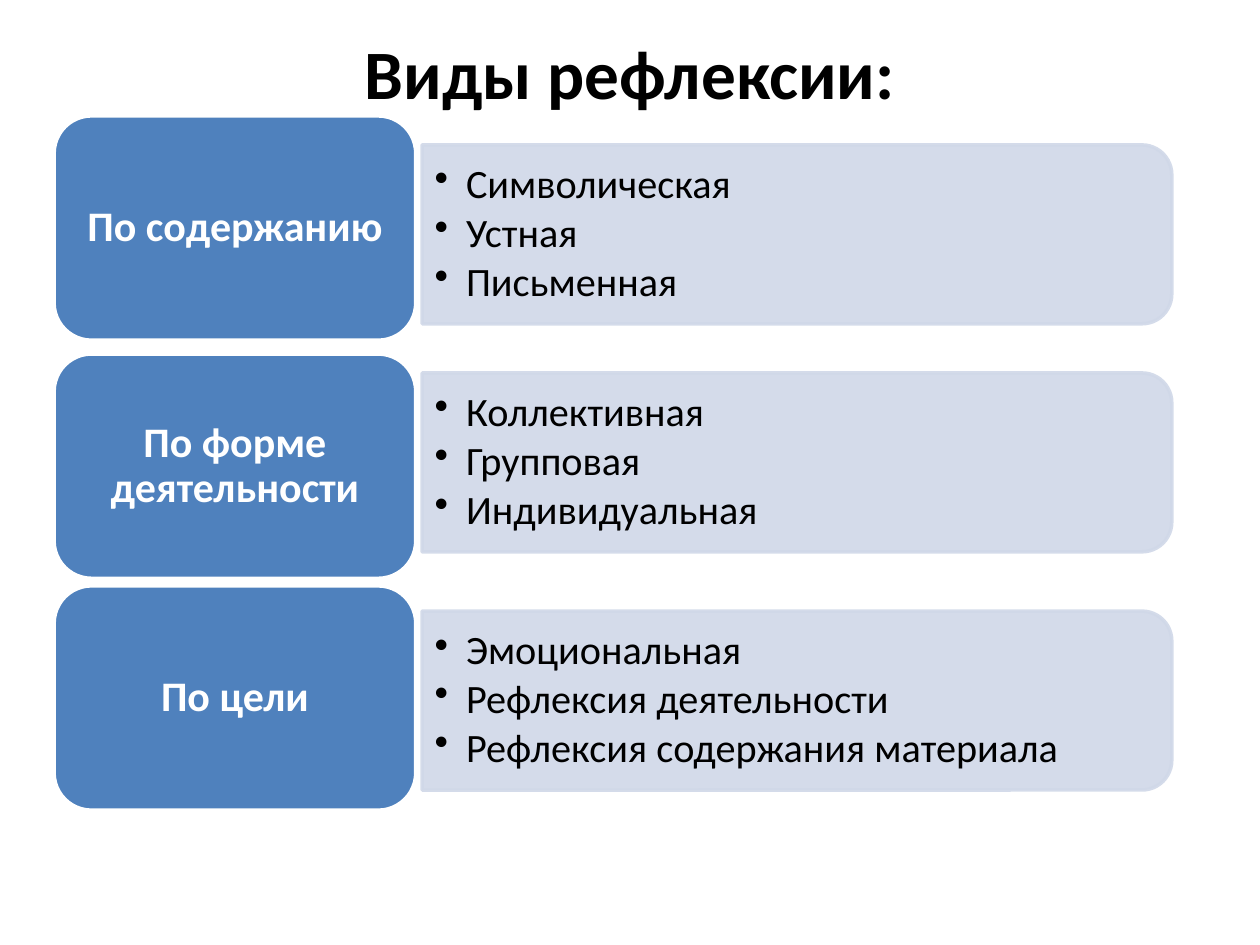
from dataclasses import dataclass

from lxml.etree import SubElement
from pptx import Presentation
from pptx.dml.color import RGBColor
from pptx.enum.shapes import MSO_SHAPE as Preset
from pptx.enum.text import MSO_ANCHOR as Anchor, PP_ALIGN as Align
from pptx.oxml.ns import qn
from pptx.util import Inches, Pt


@dataclass(frozen=True)
class Theme:
    font: str = "Calibri"
    ink: RGBColor = RGBColor(0x00, 0x00, 0x00)
    white: RGBColor = RGBColor(0xFF, 0xFF, 0xFF)
    label_fill: RGBColor = RGBColor(0x4F, 0x81, 0xBD)
    panel_fill: RGBColor = RGBColor(0xD0, 0xD8, 0xE8)
    panel_opacity: int = 90
    outline: float = 2
    title_size: float = 39.6
    label_size: float = 24
    item_size: float = 23


THEME = Theme()

# Columns and heights, in inches
LABEL_LEFT, LABEL_WIDTH, LABEL_HEIGHT = 0.43, 2.87, 1.78
PANEL_LEFT, PANEL_WIDTH, PANEL_HEIGHT = 3.35, 5.95, 1.42
ITEMS_WIDTH, ITEMS_HEIGHT = 5.88, 1.28

# Label, its top, centre line of its panel, items
KINDS = [
    ("По содержанию", 0.92, 1.86, ["Символическая", "Устная", "Письменная"]),
    ("По форме деятельности", 2.81, 3.67,
     ["Коллективная", "Групповая", "Индивидуальная"]),
    ("По цели", 4.65, 5.56,
     ["Эмоциональная", "Рефлексия деятельности",
      "Рефлексия содержания материала"]),
]


def set_font(paragraph, size, color, bold=False):
    font = paragraph.font
    font.name, font.size, font.bold = THEME.font, Pt(size), bold
    font.color.rgb = color


def paint(shape, fill, line):
    shape.shadow.inherit = False
    shape.fill.solid()
    shape.fill.fore_color.rgb = fill
    shape.line.color.rgb = line
    shape.line.width = Pt(THEME.outline)


def set_opacity(shape, percent):
    for color in shape.element.spPr.iter(qn("a:srgbClr")):
        SubElement(color, qn("a:alpha"), val=str(percent * 1000))


def add_bullet(paragraph, indent=0.25):
    properties = paragraph._p.get_or_add_pPr()
    properties.set("marL", str(Inches(indent)))
    properties.set("indent", str(-Inches(indent)))
    SubElement(properties, qn("a:buChar"), char="•")


def add_title(slide, text):
    title = slide.shapes.add_textbox(
        Inches(0.75), Inches(0.3), Inches(8.5), Inches(0.54))
    frame = title.text_frame
    frame.word_wrap = True
    frame.vertical_anchor = Anchor.MIDDLE
    heading = frame.paragraphs[0]
    heading.text = text
    heading.alignment = Align.CENTER
    set_font(heading, THEME.title_size, THEME.ink, bold=True)


def add_panel(slide, middle):
    # The upright shape is turned so that its rounded side faces right
    left = PANEL_LEFT + (PANEL_WIDTH - PANEL_HEIGHT) / 2
    panel = slide.shapes.add_shape(
        Preset.ROUND_2_SAME_RECTANGLE, Inches(left),
        Inches(middle - PANEL_WIDTH / 2),
        Inches(PANEL_HEIGHT), Inches(PANEL_WIDTH))
    panel.rotation = 90
    paint(panel, THEME.panel_fill, THEME.panel_fill)
    set_opacity(panel, THEME.panel_opacity)


def add_items(slide, middle, items):
    box = slide.shapes.add_textbox(
        Inches(PANEL_LEFT), Inches(middle - ITEMS_HEIGHT / 2),
        Inches(ITEMS_WIDTH), Inches(ITEMS_HEIGHT))
    frame = box.text_frame
    frame.word_wrap = True
    frame.vertical_anchor = Anchor.MIDDLE
    frame.text = "\n".join(items)
    for item in frame.paragraphs:
        item.level = 1
        item.line_spacing = 0.9
        item.space_after = Pt(3)
        set_font(item, THEME.item_size, THEME.ink)
        add_bullet(item)


def add_label(slide, top, text):
    label = slide.shapes.add_shape(
        Preset.ROUNDED_RECTANGLE, Inches(LABEL_LEFT), Inches(top),
        Inches(LABEL_WIDTH), Inches(LABEL_HEIGHT))
    paint(label, THEME.label_fill, THEME.white)
    frame = label.text_frame
    frame.word_wrap = True
    frame.vertical_anchor = Anchor.MIDDLE
    caption = frame.paragraphs[0]
    caption.text = text
    caption.alignment = Align.CENTER
    caption.line_spacing = 0.9
    set_font(caption, THEME.label_size, THEME.white, bold=True)


def main():
    deck = Presentation()
    deck.slide_width, deck.slide_height = Inches(10), Inches(7.5)
    slide = deck.slides.add_slide(deck.slide_layouts[6])

    add_title(slide, "Виды рефлексии:")
    for name, label_top, middle, items in KINDS:
        add_panel(slide, middle)
        add_items(slide, middle, items)
        add_label(slide, label_top, name)

    deck.save("out.pptx")


if __name__ == "__main__":
    main()
